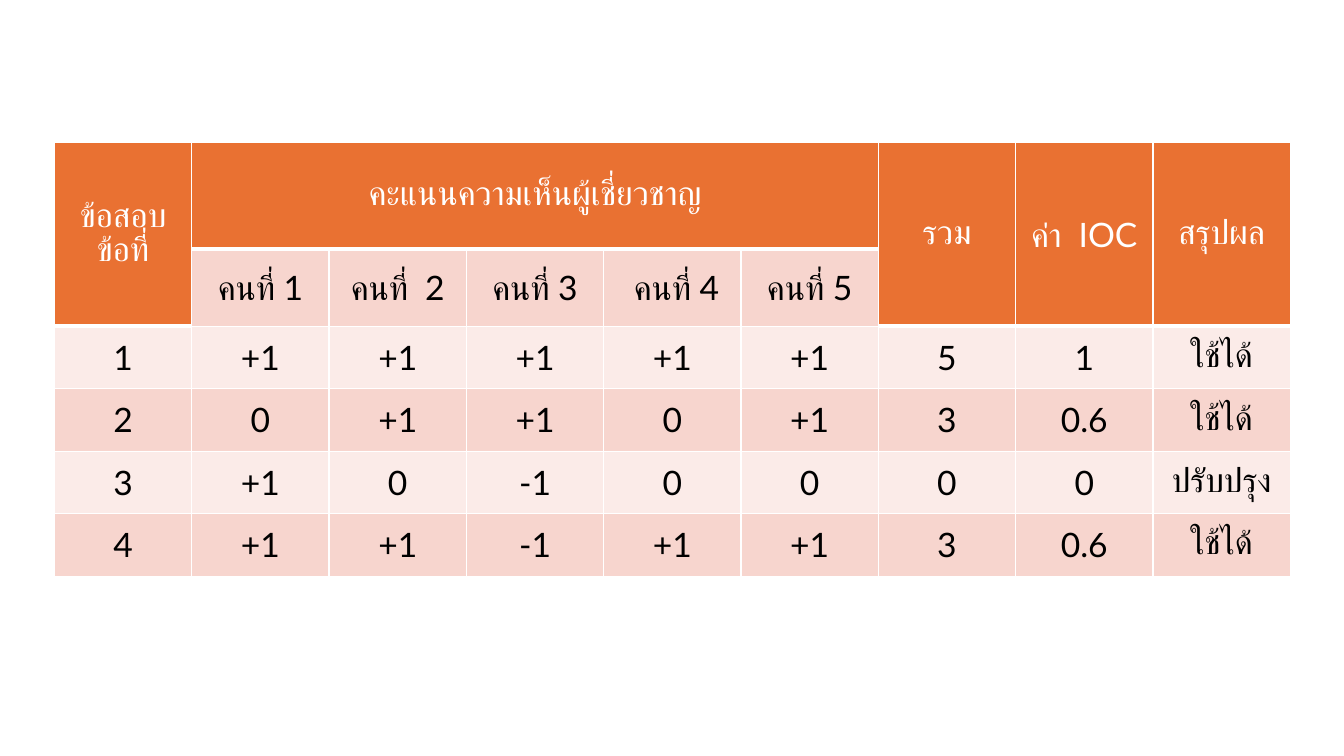
from dataclasses import dataclass

from lxml import etree
from pptx import Presentation
from pptx.dml.color import RGBColor
from pptx.enum.text import MSO_ANCHOR, PP_ALIGN
from pptx.oxml.ns import qn
from pptx.table import Table
from pptx.util import Inches, Pt

CENTER = PP_ALIGN.CENTER
MIDDLE = MSO_ANCHOR.MIDDLE

COLORS = {
    "orange": "E97132",
    "rose": "F7D5CE",
    "blush": "FBEBE8",
    "white": "FFFFFF",
    "black": "000000",
}
SLIDE_WIDTH, SLIDE_HEIGHT = 13.33, 7.5
MARGIN_LEFT, MARGIN_TOP = 0.54, 1.41
COLUMN_WIDTH = 1.362
EXPERTS_ROW, SCORE_ROW = 1.06, 0.62
FONT_FORMAT = {"name": "Lato", "size": Pt(24), "bold": False}
PLAIN_STYLE = {"first_row": False, "horz_banding": False}


@dataclass(frozen=True)
class Entry:
    row: int
    column: int
    text: str
    fill: str
    ink: str = "black"
    row_span: int = 1
    column_span: int = 1
    bottom_line: float = 1


HEADINGS = [
    ("ข้อสอบ\vข้อที่", 0, 2, 1),
    ("คะแนนความเห็นผู้เชี่ยวชาญ", 1, 1, 5),
    ("รวม", 6, 2, 1),
    ("ค่า  IOC", 7, 2, 1),
    ("สรุปผล", 8, 2, 1),
]
EXPERTS = ["คนที่ 1", "คนที่  2", "คนที่ 3", " คนที่ 4", "คนที่ 5"]
SCORES = [
    ["1", "+1", "+1", "+1", "+1", "+1", "5", "1", "ใช้ได้"],
    ["2", "0", "+1", "+1", "0", "+1", "3", "0.6", "ใช้ได้"],
    ["3", "+1", "0", "-1", "0", "0", "0", "0", "ปรับปรุง"],
    ["4", "+1", "+1", "-1", "+1", "+1", "3", "0.6", "ใช้ได้"],
]


def ioc_entries() -> list[Entry]:
    entries = [
        Entry(0, column, text, "orange", "white", row_span, column_span, 3)
        for text, column, row_span, column_span in HEADINGS
    ]
    entries += [Entry(1, column, text, "rose") for column, text in enumerate(EXPERTS, 1)]
    for row, scores in enumerate(SCORES, 2):
        fill = "rose" if row % 2 else "blush"
        entries += [Entry(row, column, text, fill) for column, text in enumerate(scores)]
    return entries


def draw_entry(ioc_table: Table, entry: Entry) -> None:
    cell = ioc_table.cell(entry.row, entry.column)
    if entry.row_span * entry.column_span > 1:
        cell.merge(ioc_table.cell(
            entry.row + entry.row_span - 1, entry.column + entry.column_span - 1
        ))
    properties = cell._tc.get_or_add_tcPr()
    for side, width in {"L": 1, "R": 1, "T": 1, "B": entry.bottom_line}.items():
        line = etree.SubElement(properties, qn(f"a:ln{side}"), w=str(Pt(width)))
        line_fill = etree.SubElement(line, qn("a:solidFill"))
        etree.SubElement(line_fill, qn("a:srgbClr"), val=COLORS["white"])
    cell.fill.solid()
    cell.fill.fore_color.rgb = RGBColor.from_string(COLORS[entry.fill])
    cell.vertical_anchor = MIDDLE
    paragraph = cell.text_frame.paragraphs[0]
    paragraph.text = entry.text
    paragraph.alignment = CENTER
    for run in paragraph.runs:
        for attribute, value in FONT_FORMAT.items():
            setattr(run.font, attribute, value)
        run.font.color.rgb = RGBColor.from_string(COLORS[entry.ink])


def main() -> None:
    presentation = Presentation()
    presentation.slide_width = Inches(SLIDE_WIDTH)
    presentation.slide_height = Inches(SLIDE_HEIGHT)
    slide = presentation.slides.add_slide(presentation.slide_layouts[6])
    row_heights = [EXPERTS_ROW] + [SCORE_ROW] * (len(SCORES) + 1)
    column_count = len(SCORES[0])
    ioc_table = slide.shapes.add_table(
        len(row_heights), column_count,
        Inches(MARGIN_LEFT), Inches(MARGIN_TOP),
        Inches(COLUMN_WIDTH * column_count), Inches(sum(row_heights)),
    ).table
    for attribute, value in PLAIN_STYLE.items():
        setattr(ioc_table, attribute, value)
    for row, height in zip(ioc_table.rows, row_heights):
        row.height = Inches(height)
    for entry in ioc_entries():
        draw_entry(ioc_table, entry)
    presentation.save("out.pptx")


if __name__ == "__main__":
    main()
